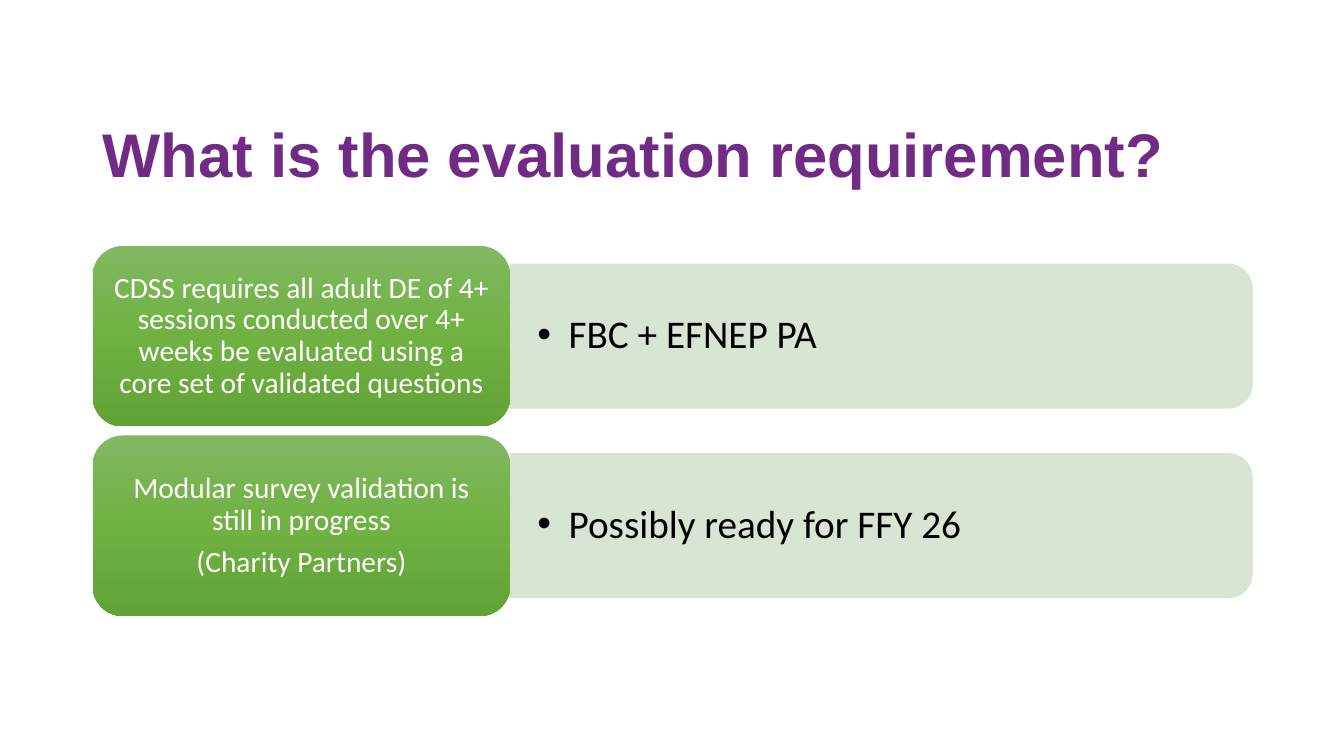
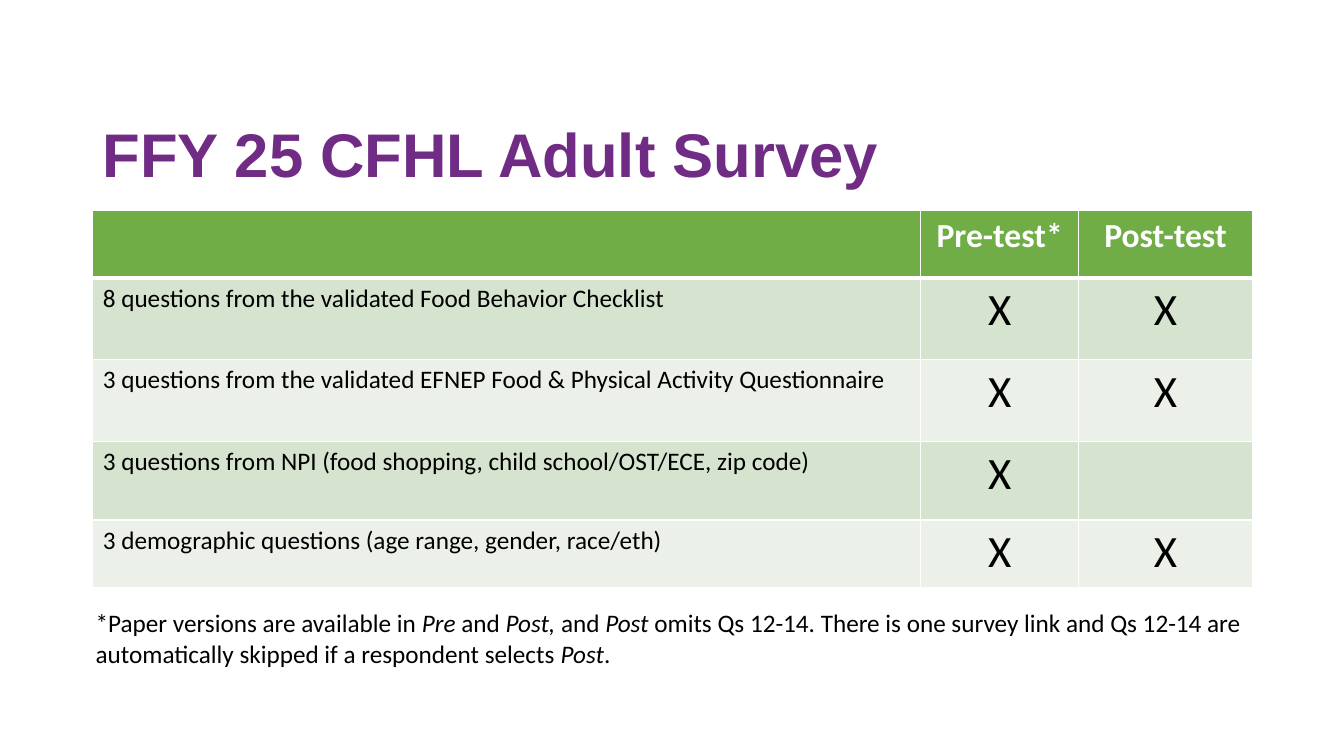
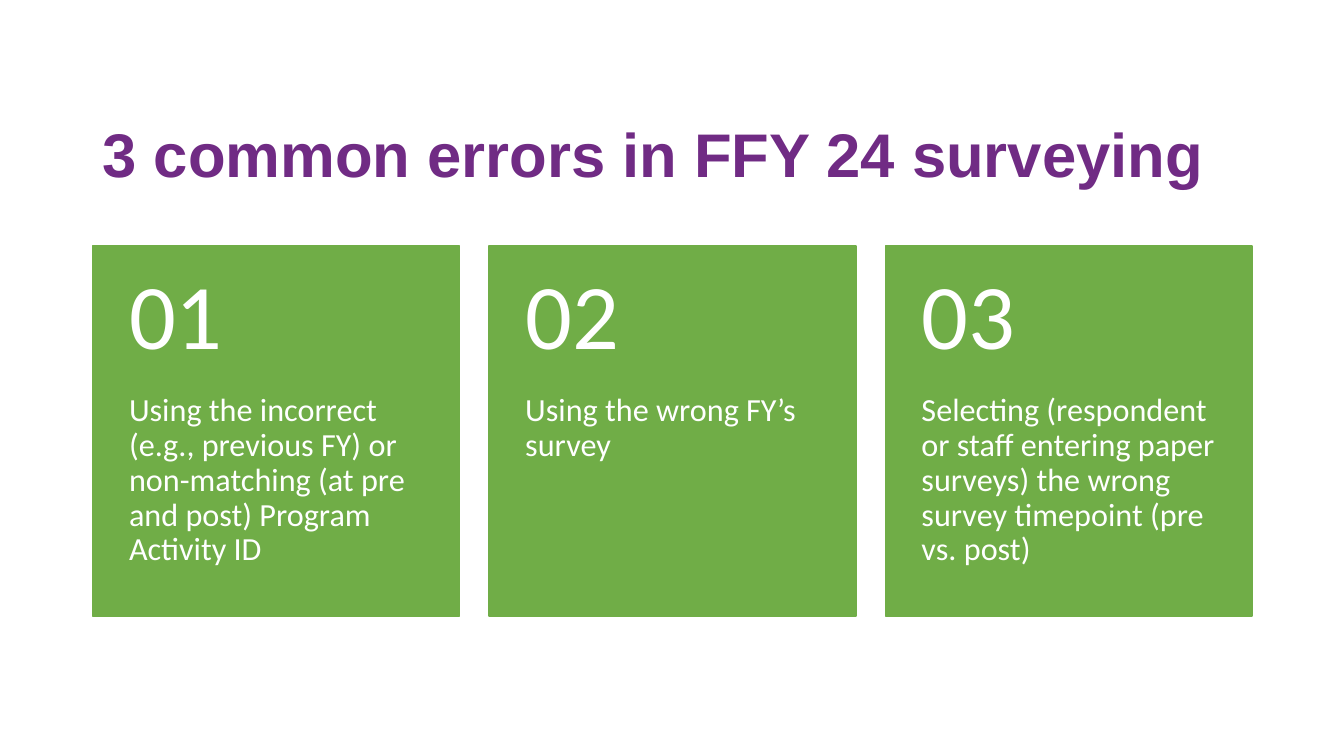
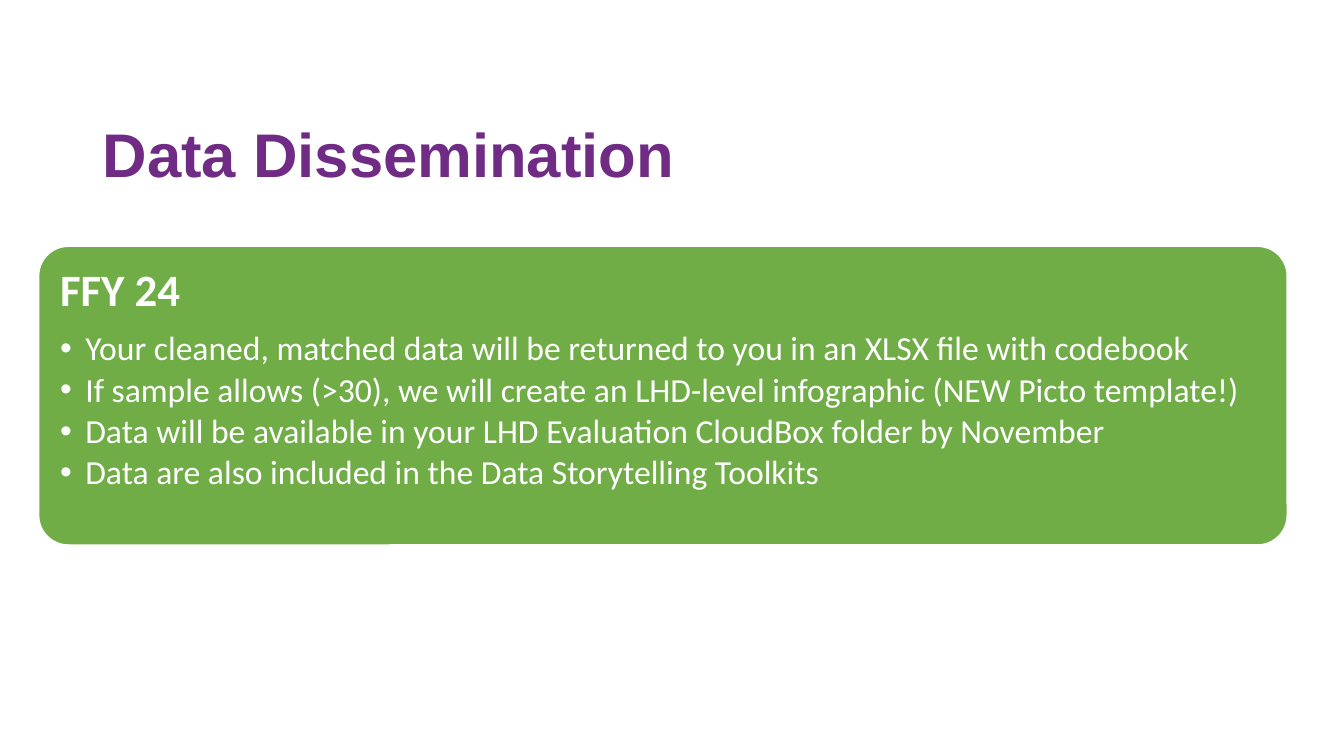
from copy import deepcopy

from lxml import etree
from pptx import Presentation
from pptx.dml.color import RGBColor
from pptx.enum.shapes import MSO_SHAPE
from pptx.enum.text import MSO_ANCHOR, PP_ALIGN
from pptx.oxml import parse_xml
from pptx.oxml.ns import nsdecls, qn
from pptx.util import Inches, Pt

RECT = MSO_SHAPE.RECTANGLE
ROUND = MSO_SHAPE.ROUNDED_RECTANGLE
TAB = MSO_SHAPE.ROUND_2_SAME_RECTANGLE
TOP, MID = MSO_ANCHOR.TOP, MSO_ANCHOR.MIDDLE
LEFT, CENTER = PP_ALIGN.LEFT, PP_ALIGN.CENTER

PURPLE, GREEN, PALE, FAINT = "702B84", "70AD47", "D5E3CF", "EBF1E9"
WHITE, BLACK = "FFFFFF", "000000"
EDGE, WIDE, ROW_TOP = 0.92, 11.5, 2.44


def add_box(slide, kind, at, fill=None, line=None, weight=1,
            pad=(0.1, 0.05, 0.1, 0.05), anchor=TOP):
    """Add a shape, or a text box when kind is None."""
    at = [Inches(n) for n in at]
    if kind is None:
        box = slide.shapes.add_textbox(*at)
    else:
        box = slide.shapes.add_shape(kind, *at)
        box.shadow.inherit = False
        if fill:
            box.fill.solid()
            box.fill.fore_color.rgb = RGBColor.from_string(fill)
        if line:
            box.line.color.rgb = RGBColor.from_string(line)
            box.line.width = Pt(weight)
        else:
            box.line.fill.background()
    frame = box.text_frame
    frame.word_wrap = True
    frame.vertical_anchor = anchor
    (frame.margin_left, frame.margin_top,
     frame.margin_right, frame.margin_bottom) = [Inches(n) for n in pad]
    return box


def write(frame, text, size, color, bold=False, face="Calibri", align=LEFT,
          lead=0.9, after=0, indent=0):
    """Add one paragraph; after is a share of the size, indent makes a bullet."""
    para = frame.add_paragraph() if frame.text else frame.paragraphs[0]
    para.text = text
    para.alignment = align
    para.line_spacing = lead
    para.space_after = Pt(round(size * after, 1))
    if indent:
        props = para._p.get_or_add_pPr()
        props.set("marL", str(Inches(indent)))
        props.set("indent", str(-Inches(indent)))
        etree.SubElement(props, qn("a:buFont")).set("typeface", "Arial")
        etree.SubElement(props, qn("a:buChar")).set("char", "•")
    for run in para.runs:
        run.font.name, run.font.size, run.font.bold = face, Pt(size), bold
        run.font.color.rgb = RGBColor.from_string(color)


deck = Presentation()
deck.slide_width, deck.slide_height = Inches(13.33), Inches(7.5)

slides = []
for title in ("What is the evaluation requirement?", "FFY 25 CFHL Adult Survey",
              "3 common errors in FFY 24 surveying", "Data Dissemination"):
    slide = deck.slides.add_slide(deck.slide_layouts[6])
    head = add_box(slide, None, (EDGE, 0.84, WIDE, 1.45), anchor=MID)
    write(head.text_frame, title, 44, PURPLE, bold=True, face="Arial")
    slides.append(slide)
need, survey, errors, data = slides

# Slide 1: requirement cards with a panel to the right of each
CARD_W, CARD_H, CARD_STEP = 4.14, 1.79, 1.88
PANEL_W, PANEL_H = WIDE - CARD_W, 1.43
cards = [
    (["CDSS requires all adult DE of 4+ sessions conducted over 4+ weeks "
      "be evaluated using a core set of validated questions"], "FBC + EFNEP PA"),
    (["Modular survey validation is still in progress", "(Charity Partners)"],
     "Possibly ready for FFY 26"),
]
for i, (lines, point) in enumerate(cards):
    top = ROW_TOP + i * CARD_STEP
    mid_x, mid_y = EDGE + CARD_W + PANEL_W / 2, top + CARD_H / 2
    panel = add_box(need, TAB, (mid_x - PANEL_H / 2, mid_y - PANEL_W / 2,
                                PANEL_H, PANEL_W), PALE, PALE, 0.5)
    panel.rotation = 90
    for tint in panel._element.spPr.iter(qn("a:srgbClr")):
        etree.SubElement(tint, qn("a:alpha")).set("val", "90000")
    label = add_box(need, None, (EDGE + CARD_W, mid_y - 0.65, 7.29, 1.3),
                    pad=(0.27, 0.14, 0.27, 0.14), anchor=MID)
    write(label.text_frame, point, 28, BLACK, after=0.15, indent=0.31)

    card = add_box(need, ROUND, (EDGE, top, CARD_W, CARD_H),
                   pad=(0.09, 0.04, 0.09, 0.04), anchor=MID)
    card.fill.gradient()
    card.fill.gradient_angle = 270
    first = card._element.spPr.find(".//" + qn("a:gs"))
    first.addnext(deepcopy(first))
    shades = ((0, "81B861"), (0.5, "6FB242"), (1, "62A336"))
    for stop, (place, shade) in zip(card.fill.gradient_stops, shades):
        stop.position = place
        stop.color.rgb = RGBColor.from_string(shade)
    for text in lines:
        write(card.text_frame, text, 21, WHITE, align=CENTER, after=0.35)

# Slide 2: survey table and footnote
rows = [
    ("", "Pre-test*", "Post-test"),
    ("8 questions from the validated Food Behavior Checklist", "X", "X"),
    ("3 questions from the validated EFNEP Food & Physical Activity Questionnaire",
     "X", "X"),
    ("3 questions from NPI (food shopping, child school/OST/ECE, zip code)", "X", ""),
    ("3 demographic questions (age range, gender, race/eth)", "X", "X"),
]
grid = survey.shapes.add_table(5, 3, Inches(EDGE), Inches(2.09),
                               Inches(WIDE), Inches(3.74)).table
for col, width in zip(grid.columns, (8.21, 1.57, 1.72)):
    col.width = Inches(width)
for row, height in zip(grid.rows, (0.67, 0.81, 0.81, 0.78, 0.67)):
    row.height = Inches(height)
for r, row in enumerate(rows):
    for c, text in enumerate(row):
        cell = grid.cell(r, c)
        if r == 0:
            fill, size, color = GREEN, 24, WHITE
        else:
            fill, size, color = (PALE if r % 2 else FAINT), (32 if c else 18), BLACK
        write(cell.text_frame, text, size, color, bold=r == 0,
              align=CENTER if c else LEFT, lead=1)
        props = cell._tc.get_or_add_tcPr()
        for side in "LRTB":
            thick = 3 if (r, side) in ((0, "B"), (1, "T")) else 1
            props.append(parse_xml(
                f'<a:ln{side} {nsdecls("a")} w="{Pt(thick)}"><a:solidFill>'
                f'<a:srgbClr val="{WHITE}"/></a:solidFill></a:ln{side}>'))
        cell.fill.solid()
        cell.fill.fore_color.rgb = RGBColor.from_string(fill)

note = add_box(survey, None, (0.85, 5.98, 11.68, 0.71)).text_frame.paragraphs[0]
parts = ("*Paper versions are available in |Pre| and |Post, |and |Post| omits Qs 12-14. "
         "There is one survey link and Qs 12-14 are automatically skipped if a "
         "respondent selects |Post|.").split("|")
for i, text in enumerate(parts):
    run = note.add_run()
    run.text = text
    run.font.name, run.font.size, run.font.italic = "Calibri", Pt(18), i % 2 == 1
    run.font.color.rgb = RGBColor.from_string(BLACK)

# Slide 3: numbered tiles
TILE_W, TILE_H, NUM_H = 3.64, 3.67, 1.47
step = (WIDE - TILE_W) / 2
faults = (
    "Using the incorrect (e.g., previous FY) or non-matching (at pre and post) "
    "Program Activity ID",
    "Using the wrong FY’s survey",
    "Selecting (respondent or staff entering paper surveys) the wrong survey "
    "timepoint (pre vs. post)",
)
for i, fault in enumerate(faults):
    left = EDGE + i * step
    tile = add_box(errors, RECT, (left, ROW_TOP, TILE_W, TILE_H), GREEN, GREEN,
                   pad=(0.36, NUM_H, 0.36, 0.36))
    write(tile.text_frame, fault, 23, WHITE, after=0.35)
    num = add_box(errors, None, (left, ROW_TOP, TILE_W, NUM_H),
                  pad=(0.36, 0.18, 0.36, 0.18), anchor=MID)
    write(num.text_frame, f"{i + 1:02}", 66, WHITE, after=0.35)

# Slide 4: data plan
plan = add_box(data, ROUND, (0.38, ROW_TOP, 12.39, 2.97), GREEN, WHITE, 1.5,
               pad=(0.13, 0.13, 0.13, 0.13))
plan.adjustments[0] = 0.1
write(plan.text_frame, "FFY 24", 32, WHITE, bold=True, after=0.35)
for text in (
    "Your cleaned, matched data will be returned to you in an XLSX file with codebook",
    "If sample allows (>30), we will create an LHD-level infographic "
    "(NEW Picto template!)",
    "Data will be available in your LHD Evaluation CloudBox folder by November",
    "Data are also included in the Data Storytelling Toolkits",
):
    write(plan.text_frame, text, 24, WHITE, after=0.15, indent=0.25)

deck.save("out.pptx")
